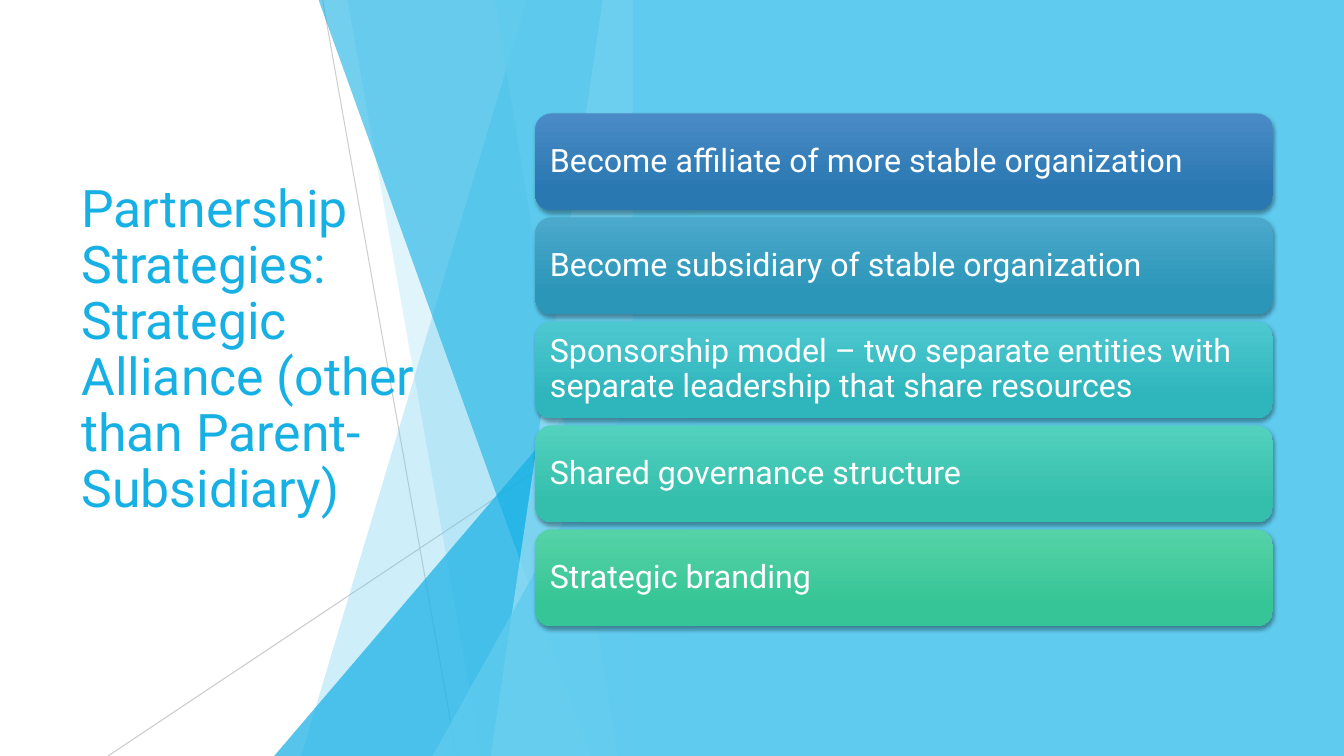
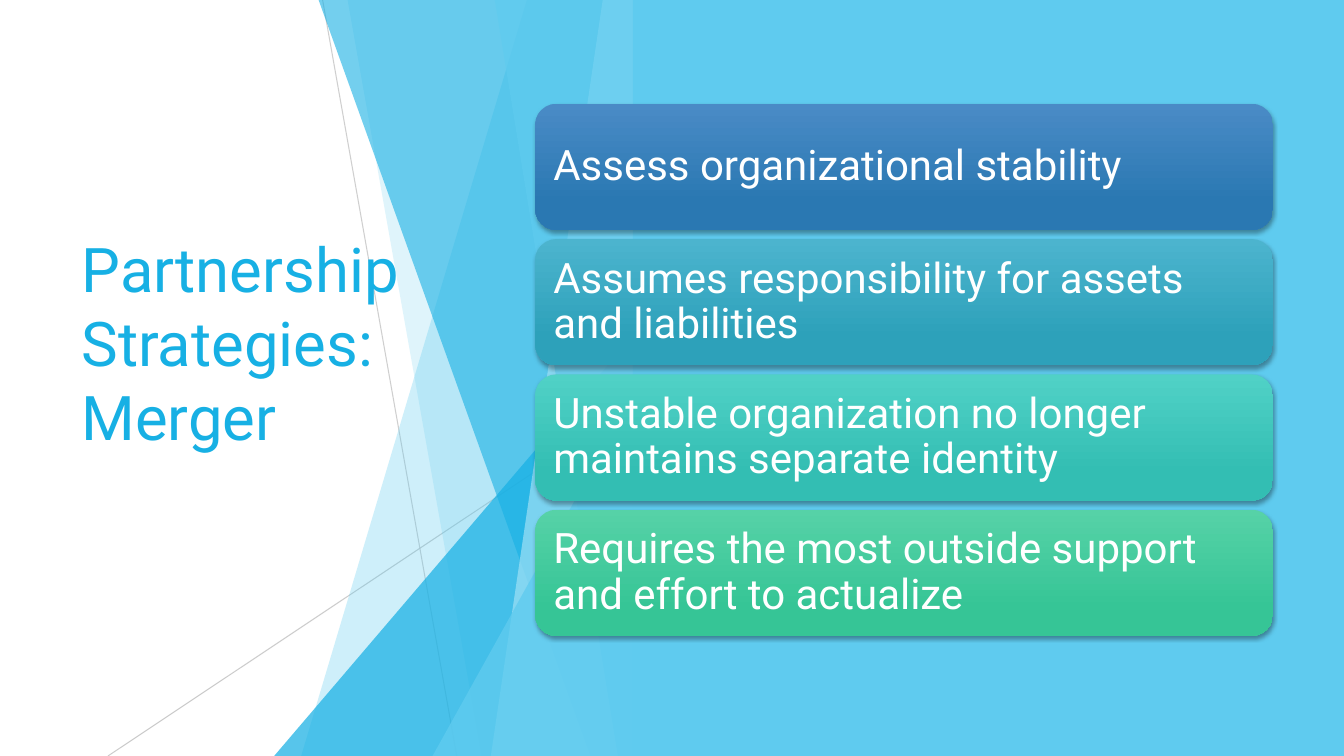
import lxml.etree
import pptx
import pptx.dml.color
import pptx.enum.shapes
import pptx.enum.text
import pptx.oxml.ns
import pptx.util
from pptx.util import Cm

WIDTH, HEIGHT = 33.87, 19.05
PANEL_LEFT = 15.95
BAR_CENTER = 9.32

STRATEGIES = [
    {
        "title": "Partnership Strategies: Strategic Alliance (other than Parent-Subsidiary)",
        "title_size": 37, "title_spacing": 0.9,
        "bar_height": 2.44, "bar_gap": 0.18, "bar_size": 23, "bar_inset": 0.25,
        "bars": [
            ("Become affiliate of more stable organization", "4A8BC6", "2A78B2"),
            ("Become subsidiary of stable organization", "4BA9CC", "2C96B8"),
            ("Sponsorship model – two separate entities with separate leadership that share resources",
             "4DC8D0", "2FB5BC"),
            ("Shared governance structure", "52D1BE", "34BFAC"),
            ("Strategic branding", "56D2A7", "36C596"),
        ],
    },
    {
        "title": "Partnership Strategies: Merger",
        "title_size": 44, "title_spacing": 1.0,
        "bar_height": 3.18, "bar_gap": 0.23, "bar_size": 30, "bar_inset": 0.3,
        "bars": [
            ("Assess organizational stability", "4A8BC6", "2A78B2"),
            ("Assumes responsibility for assets and liabilities", "4CB4CE", "2DA1BA"),
            ("Unstable organization no longer maintains separate identity", "50D1C6", "33BEB3"),
            ("Requires the most outside support and effort to actualize", "56D2A7", "36C596"),
        ],
    },
]


def color(value):
    return pptx.dml.color.RGBColor.from_string(value)


def add_xml(parent, tag, **attributes):
    return lxml.etree.SubElement(parent, pptx.oxml.ns.qn(tag), attributes)


def set_opacity(shape, percent):
    color_element = shape.element.spPr.find(".//" + pptx.oxml.ns.qn("a:srgbClr"))
    add_xml(color_element, "a:alpha", val=str(percent * 1000))


class FacetDeck:
    """Draws slides with a faceted backdrop, a title on the left and bars on the right."""

    font_name = "Roboto"
    accent, sky, pale, gray, white = "17B0E4", "5FCBEF", "9FE0F5", "BFBFBF", "FFFFFF"

    def __init__(self):
        self.presentation = pptx.Presentation()
        self.presentation.slide_width = Cm(WIDTH)
        self.presentation.slide_height = Cm(HEIGHT)
        self.slide = None

    def add_slide(self):
        self.slide = self.presentation.slides.add_slide(self.presentation.slide_layouts[5])

    def finish_facet(self, shape, fill_color, opacity=100):
        shape.shadow.inherit = False
        shape.fill.solid()
        shape.fill.fore_color.rgb = color(fill_color)
        shape.line.fill.background()
        set_opacity(shape, opacity)

    def hairline(self, start_x, start_y, end_x, end_y, opacity):
        connector = self.slide.shapes.add_connector(
            pptx.enum.shapes.MSO_CONNECTOR.STRAIGHT, Cm(start_x), Cm(start_y), Cm(end_x), Cm(end_y))
        connector.line.color.rgb = color(self.gray)
        connector.line.width = pptx.util.Pt(0.75)
        set_opacity(connector, opacity)
        add_xml(connector.element.spPr, "a:effectLst")

    def slanted_facet(self, top_x, bottom_x, fill_color, opacity):
        builder = self.slide.shapes.build_freeform(Cm(top_x), 0)
        corners = [(PANEL_LEFT, 0), (PANEL_LEFT, HEIGHT), (bottom_x, HEIGHT)]
        builder.add_line_segments([(Cm(x), Cm(y)) for x, y in corners], close=True)
        self.finish_facet(builder.convert_to_shape(), fill_color, opacity)

    def corner_facet(self, left, top, fill_color, opacity):
        triangle = self.slide.shapes.add_shape(
            pptx.enum.shapes.MSO_SHAPE.ISOSCELES_TRIANGLE,
            Cm(left), Cm(top), Cm(PANEL_LEFT - left), Cm(HEIGHT - top))
        triangle.adjustments[0] = 1
        self.finish_facet(triangle, fill_color, opacity)

    def backdrop(self):
        self.hairline(8.13, 0, 11.51, HEIGHT, 75)
        self.hairline(PANEL_LEFT, 10.24, 2.72, HEIGHT, 80)
        self.slanted_facet(13.28, 7.59, self.sky, 30)
        self.slanted_facet(8.76, 12.14, self.sky, 20)
        self.corner_facet(6.91, 8.46, self.accent, 72)
        self.slanted_facet(8.03, 14.88, self.accent, 60)
        self.slanted_facet(15.19, 12.37, self.pale, 70)
        self.slanted_facet(12.47, 15.57, self.sky, 65)
        self.corner_facet(10.9, 9.98, self.sky, 80)
        panel = self.slide.shapes.add_shape(
            pptx.enum.shapes.MSO_SHAPE.RECTANGLE,
            Cm(PANEL_LEFT), 0, Cm(WIDTH - PANEL_LEFT), Cm(HEIGHT))
        self.finish_facet(panel, self.sky)

    def set_text(self, text_frame, text, size, font_color, spacing):
        text_frame.text = text
        text_frame.word_wrap = True
        text_frame.auto_size = pptx.enum.text.MSO_AUTO_SIZE.NONE
        text_frame.vertical_anchor = pptx.enum.text.MSO_ANCHOR.MIDDLE
        paragraph = text_frame.paragraphs[0]
        paragraph.alignment = pptx.enum.text.PP_ALIGN.LEFT
        paragraph.line_spacing = spacing
        font = paragraph.runs[0].font
        font.name = self.font_name
        font.size = pptx.util.Pt(size)
        font.color.rgb = color(font_color)

    def title(self, text, size, spacing):
        title = self.slide.shapes.title
        title.left, title.top, title.width, title.height = Cm(1.8), Cm(3.84), Cm(9.86), Cm(11.38)
        self.set_text(title.text_frame, text, size, self.accent, spacing)
        title.text_frame.margin_bottom = Cm(0.13) + pptx.util.Pt(size * spacing * 1.17)
        title.element.getparent().append(title.element)

    def bar(self, text, top, height, size, inset, top_color, bottom_color):
        bar = self.slide.shapes.add_shape(
            pptx.enum.shapes.MSO_SHAPE.ROUNDED_RECTANGLE, Cm(13.49), Cm(top), Cm(18.59), Cm(height))
        bar.fill.gradient()
        bar.fill.gradient_angle = 270
        for stop, position, value in zip(bar.fill.gradient_stops, (0, 0.78), (top_color, bottom_color)):
            stop.position = position
            stop.color.rgb = color(value)
        bar.line.fill.background()
        self.soft_shadow(bar)
        frame = bar.text_frame
        frame.margin_left = frame.margin_right = frame.margin_top = frame.margin_bottom = Cm(inset)
        self.set_text(frame, text, size, self.white, 0.9)

    def soft_shadow(self, shape):
        shape.shadow.inherit = False
        effects = shape.element.spPr.find(pptx.oxml.ns.qn("a:effectLst"))
        shadow = add_xml(effects, "a:outerShdw", blurRad=str(pptx.util.Pt(3)),
                         dist=str(pptx.util.Pt(2)), dir="5400000", rotWithShape="0")
        shadow_color = add_xml(shadow, "a:srgbClr", val="000000")
        add_xml(shadow_color, "a:alpha", val="35000")

    def bar_stack(self, bars, height, gap, size, inset):
        pitch = height + gap
        first_top = BAR_CENTER - (len(bars) * pitch - gap) / 2
        for index, (text, top_color, bottom_color) in enumerate(bars):
            self.bar(text, first_top + index * pitch, height, size, inset, top_color, bottom_color)


def main():
    deck = FacetDeck()
    for strategy in STRATEGIES:
        deck.add_slide()
        deck.backdrop()
        deck.title(strategy["title"], strategy["title_size"], strategy["title_spacing"])
        deck.bar_stack(strategy["bars"], strategy["bar_height"], strategy["bar_gap"],
                       strategy["bar_size"], strategy["bar_inset"])
    deck.presentation.save("out.pptx")


if __name__ == "__main__":
    main()
